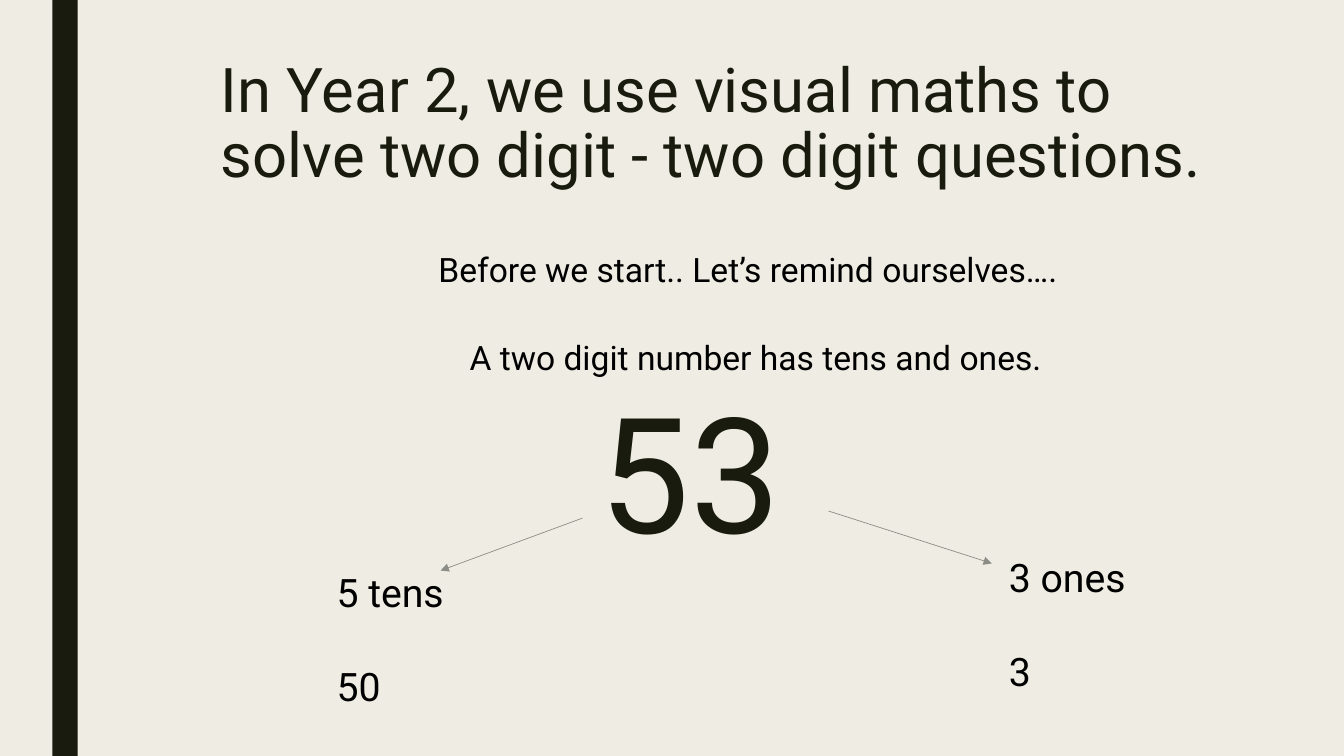
from lxml.etree import SubElement
from pptx import Presentation
from pptx.dml.color import RGBColor
from pptx.enum.shapes import MSO_CONNECTOR as Connector, MSO_SHAPE as Shape
from pptx.enum.text import MSO_ANCHOR as Anchor, MSO_AUTO_SIZE as AutoSize, PP_ALIGN as Align
from pptx.oxml.ns import qn
from pptx.util import Inches, Pt

WIDTH, HEIGHT = Inches(13.33), Inches(7.5)
DARK, BLACK, GREY, CREAM = "191B0E", "000000", "8C8D86", "EFEDE3"


def across(percent):
    """Return a share of the slide's width."""
    return round(WIDTH * percent / 100)


def down(percent):
    """Return a share of the slide's height."""
    return round(HEIGHT * percent / 100)


def paint(target, colour):
    """Give a fill or line fill a solid colour."""
    target.solid()
    target.fore_color.rgb = RGBColor.from_string(colour)


def place(shape, left, top, width, height):
    """Move and size a shape by shares of the slide."""
    box = {"left": across(left), "top": down(top),
           "width": across(width), "height": down(height)}
    for name, value in box.items():
        setattr(shape, name, value)


def write(shape, lines, size, colour, spacing=1.0, gap=0, fit=AutoSize.NONE):
    """Fill a shape with left-aligned paragraphs in one style."""
    frame = shape.text_frame
    frame.text = "\n".join(lines)
    frame_format = {"word_wrap": True, "auto_size": fit, "vertical_anchor": Anchor.TOP}
    for name, value in frame_format.items():
        setattr(frame, name, value)
    for index, paragraph in enumerate(frame.paragraphs):
        paragraph_format = {"alignment": Align.LEFT, "line_spacing": spacing,
                            "space_before": Pt(gap if index else 0)}
        for name, value in paragraph_format.items():
            setattr(paragraph, name, value)
        for run in paragraph.runs:
            for name, value in {"name": "Roboto", "size": Pt(size)}.items():
                setattr(run.font, name, value)
            paint(run.font.fill, colour)


def add_text(slide, box, lines, size, colour=BLACK, **style):
    """Add a text box."""
    shape = slide.shapes.add_textbox(0, 0, 0, 0)
    place(shape, *box)
    write(shape, lines, size, colour, **style)


def add_bar(slide, left, width):
    """Add the full-height side bar."""
    bar = slide.shapes.add_shape(Shape.RECTANGLE, across(left), 0, across(width), HEIGHT)
    bar.shadow.inherit = False
    paint(bar.fill, DARK)
    bar.line.fill.background()


def add_arrow(slide, start, end):
    """Add a thin arrow between two points."""
    arrow = slide.shapes.add_connector(
        Connector.STRAIGHT, across(start[0]), down(start[1]), across(end[0]), down(end[1]))
    arrow.line.width = Pt(0.5)
    paint(arrow.line.fill, GREY)
    properties = arrow.element.spPr
    SubElement(properties.find(qn("a:ln")), qn("a:tailEnd"), type="triangle")
    SubElement(properties, qn("a:effectLst"))


def main():
    """Build the place value slide."""
    presentation = Presentation()
    presentation.slide_width, presentation.slide_height = WIDTH, HEIGHT
    slide = presentation.slides.add_slide(presentation.slide_layouts[5])
    paint(slide.background.fill, CREAM)
    add_bar(slide, 3.9, 1.88)

    title = slide.shapes.title
    place(title, 15.68, 7.2, 78.75, 21.6)
    write(title, ["In Year 2, we use visual maths to solve two digit - two digit questions."],
          44, DARK, spacing=0.89)

    reminders = [(31.88, 32.27, "Before we start.. Let’s remind ourselves…."),
                 (34.2, 43.87, "A two digit number has tens and ones.")]
    for left, top, sentence in reminders:
        add_text(slide, (left, top, 65.1, 6.67), [sentence], 24, fit=AutoSize.SHAPE_TO_FIT_TEXT)

    add_text(slide, (43.88, 53.73, 22.5, 21.6), ["53"], 115, DARK, spacing=0.79)

    parts = [(24.3, 74.53, ["5 tens", "50"], (43.35, 68.53), (32.78, 75.47)),
             (74.33, 72.53, ["3 ones", "3"], (61.65, 67.6), (73.8, 74.53))]
    for left, top, lines, start, end in parts:
        add_text(slide, (left, top, 23.63, 20.13), lines, 28, gap=33.6,
                 fit=AutoSize.SHAPE_TO_FIT_TEXT)
        add_arrow(slide, start, end)

    presentation.save("out.pptx")


if __name__ == "__main__":
    main()
